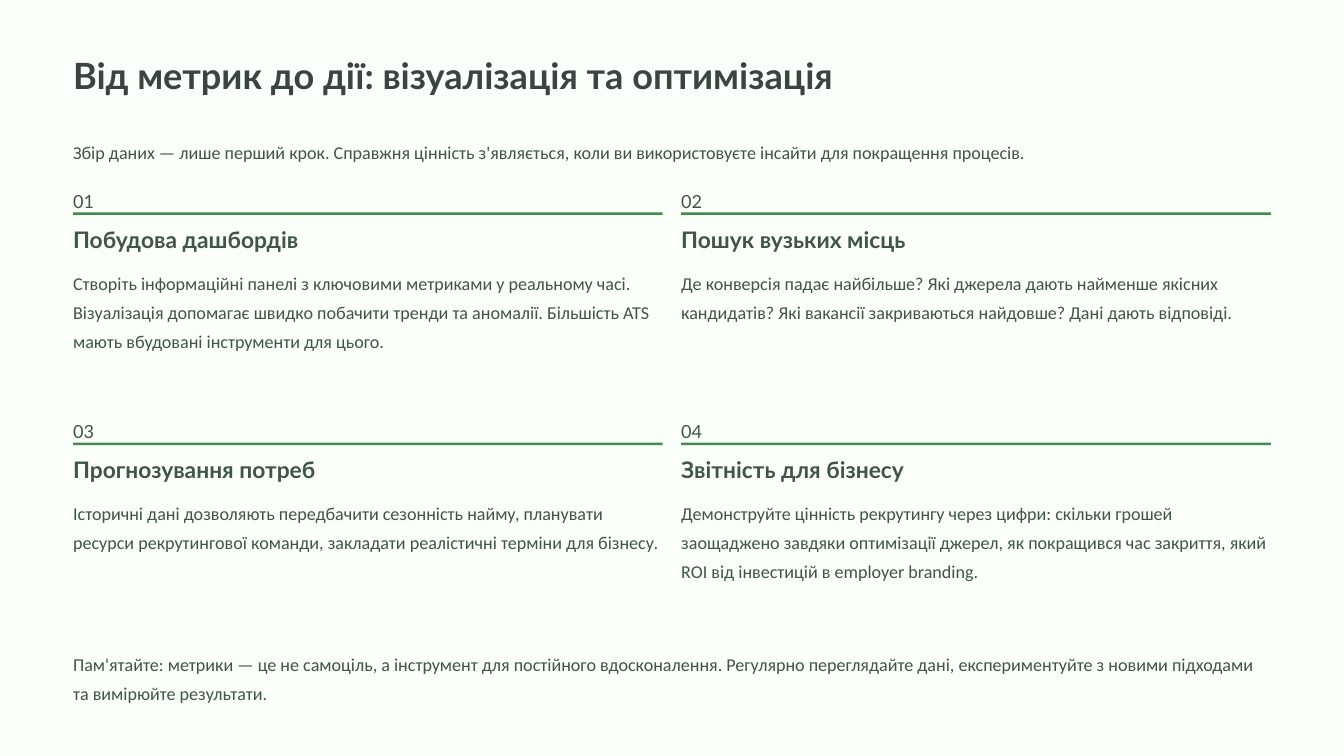
from dataclasses import dataclass

from pptx import Presentation
from pptx.dml.color import RGBColor
from pptx.enum.shapes import MSO_SHAPE as Preset
from pptx.enum.text import MSO_ANCHOR as Anchor, MSO_AUTO_SIZE as Fit, PP_ALIGN as Align
from pptx.shapes.base import BaseShape
from pptx.slide import Slide
from pptx.util import Inches, Pt

COLORS = {"page": "FAFFFA", "title": "3B4540", "text": "405449", "rule": "438951"}
WIDE, HIGH = 16, 9
EDGE, GAP = 0.87, 0.22
FULL = WIDE - 2 * EDGE
COL = (FULL - GAP) / 2
TOP, ROW = 2.18, 2.74
LINE = 0.35


@dataclass(frozen=True)
class Style:
    font: str
    size: float
    lead: float
    color: str = "text"
    bold: bool = False


@dataclass(frozen=True)
class Step:
    head: str
    width: float
    body: str
    lines: int


TITLE = Style("Lato", 31, 39, "title", True)
HEAD = Style("Lato", 19.5, 24, bold=True)
MARK = Style("Lato", 15.5, 25)
BODY = Style("Calibri", 15.5, 25)

STEPS = [
    Step("Побудова дашбордів", 2.98,
         "Створіть інформаційні панелі з ключовими метриками у реальному часі. "
         "Візуалізація допомагає швидко побачити тренди та аномалії. "
         "Більшість ATS мають вбудовані інструменти для цього.", 4),
    Step("Пошук вузьких місць", 3.03,
         "Де конверсія падає найбільше? Які джерела дають найменше якісних кандидатів? "
         "Які вакансії закриваються найдовше? Дані дають відповіді.", 3),
    Step("Прогнозування потреб", 3.23,
         "Історичні дані дозволяють передбачити сезонність найму, планувати ресурси "
         "рекрутингової команди, закладати реалістичні терміни для бізнесу.", 3),
    Step("Звітність для бізнесу", 2.96,
         "Демонструйте цінність рекрутингу через цифри: скільки грошей заощаджено "
         "завдяки оптимізації джерел, як покращився час закриття, "
         "який ROI від інвестицій в employer branding.", 4),
]


def tint(name: str) -> RGBColor:
    return RGBColor.from_string(COLORS[name])


def write(shape: BaseShape, text: str, style: Style, wrap: bool) -> None:
    frame = shape.text_frame
    frame.margin_left = frame.margin_right = 0
    frame.margin_top = frame.margin_bottom = 0
    frame.auto_size = Fit.NONE
    frame.word_wrap = wrap
    frame.vertical_anchor = Anchor.TOP
    frame.text = text
    para = frame.paragraphs[0]
    para.alignment = Align.LEFT
    para.line_spacing = Pt(style.lead)
    para.font.name = style.font
    para.font.size = Pt(style.size)
    para.font.bold = style.bold
    para.font.color.rgb = tint(style.color)


def label(slide: Slide, left: float, top: float, width: float, height: float,
          text: str, style: Style, wrap: bool = False) -> None:
    box = slide.shapes.add_textbox(*map(Inches, (left, top, width, height)))
    write(box, text, style, wrap)


def draw(slide: Slide, index: int, step: Step) -> None:
    row, col = divmod(index, 2)
    left, top = EDGE + col * (COL + GAP), TOP + row * ROW
    label(slide, left, top, 0.22, 0.27, f"{index + 1:02}", MARK)
    rule = slide.shapes.add_shape(
        Preset.RECTANGLE, *map(Inches, (left, top + 0.35, COL, 0.03)))
    rule.shadow.inherit = False
    rule.fill.solid()
    rule.fill.fore_color.rgb = tint("rule")
    rule.line.fill.background()
    label(slide, left, top + 0.5, step.width, 0.34, step.head, HEAD)
    label(slide, left, top + 0.97, COL, step.lines * LINE, step.body, BODY, True)


def main() -> None:
    deck = Presentation()
    deck.slide_width, deck.slide_height = Inches(WIDE), Inches(HIGH)
    slide = deck.slides.add_slide(deck.slide_layouts[5])
    slide.background.fill.solid()
    slide.background.fill.fore_color.rgb = tint("page")

    title = slide.shapes.title
    title.left, title.top = Inches(EDGE), Inches(0.61)
    title.width, title.height = Inches(10.27), Inches(0.54)
    write(title, "Від метрик до дії: візуалізація та оптимізація", TITLE, False)

    label(slide, EDGE, 1.59, FULL, LINE,
          "Збір даних — лише перший крок. Справжня цінність з'являється, "
          "коли ви використовуєте інсайти для покращення процесів.", BODY)
    for index, step in enumerate(STEPS):
        draw(slide, index, step)
    label(slide, EDGE, 7.69, FULL, 2 * LINE,
          "Пам'ятайте: метрики — це не самоціль, а інструмент для постійного "
          "вдосконалення. Регулярно переглядайте дані, експериментуйте з новими "
          "підходами та вимірюйте результати.", BODY, True)
    deck.save("out.pptx")


if __name__ == "__main__":
    main()
